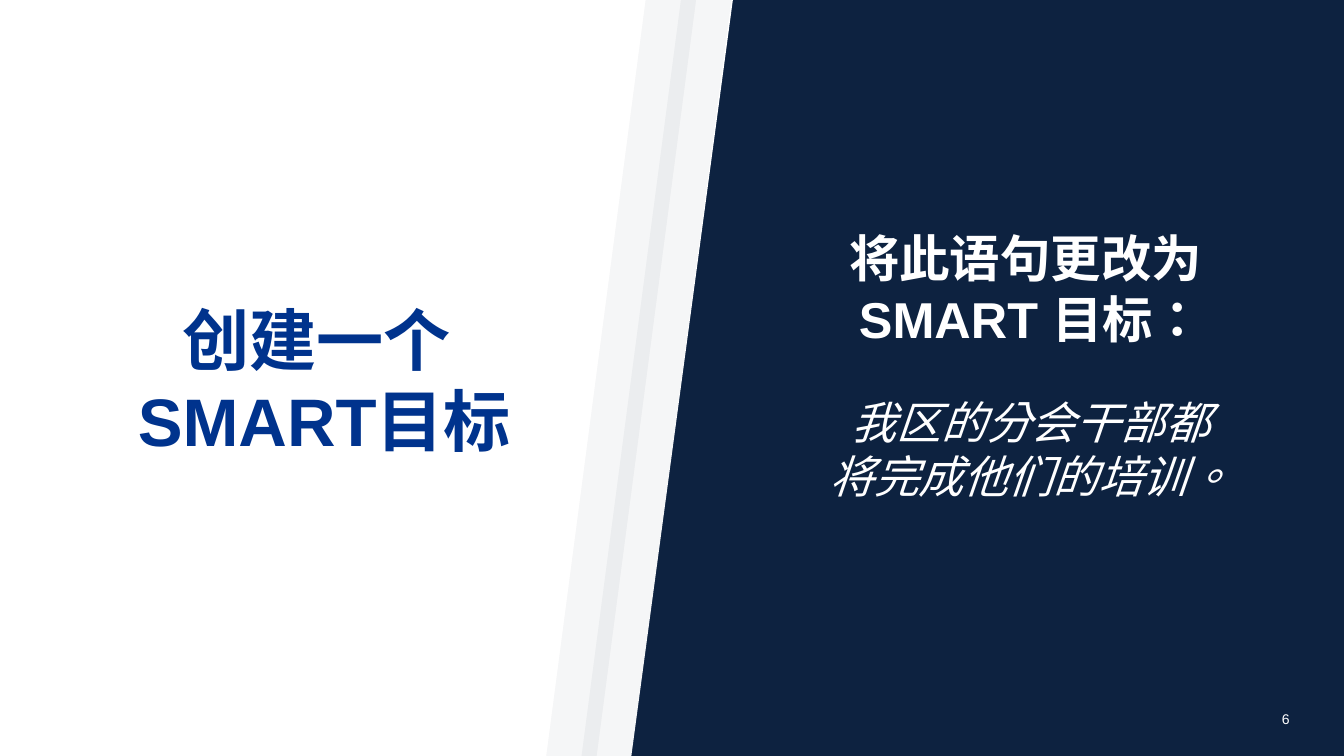
import pptx
import pptx.util
import pptx.dml.color
import pptx.enum.lang
import pptx.enum.shapes
import pptx.enum.text
import pptx.oxml.ns
import lxml.etree

Pt = pptx.util.Pt
ALIGN = pptx.enum.text.PP_ALIGN
ANCHOR = pptx.enum.text.MSO_ANCHOR
CHINESE = pptx.enum.lang.MSO_LANGUAGE_ID.TRADITIONAL_CHINESE
WIDTH, HEIGHT = 960, 540
NAVY, BLUE, WHITE = "0D2240", "00338D", "FFFFFF"


def paint(fill, color):
    fill.solid()
    fill.fore_color.rgb = pptx.dml.color.RGBColor.from_string(color)


def set_alpha(sp, percent):
    clr = sp._element.spPr.xpath("a:solidFill/a:srgbClr")[0]
    alpha = lxml.etree.SubElement(clr, pptx.oxml.ns.qn("a:alpha"))
    alpha.set("val", str(percent * 1000))


def finish(sp, color):
    paint(sp.fill, color)
    sp.line.fill.background()
    sp.shadow.inherit = False


def add_panel(slide, color):
    sp = slide.shapes.add_shape(
        pptx.enum.shapes.MSO_SHAPE.RECTANGLE, 0, 0, Pt(WIDTH), Pt(HEIGHT))
    finish(sp, color)


def add_slanted(slide, top, bottom, color, alpha=None):
    points = [(top[0], 0), (top[1], 0), (bottom[1], HEIGHT), (bottom[0], HEIGHT)]
    points = [(Pt(x), Pt(y)) for x, y in points]
    builder = slide.shapes.build_freeform(*points[0])
    builder.add_line_segments(points[1:], close=True)
    sp = builder.convert_to_shape()
    finish(sp, color)
    if alpha is not None:
        set_alpha(sp, alpha)


def write(sp, lines, size, color, bold=False, italic=False,
          align=ALIGN.CENTER, anchor=ANCHOR.TOP):
    tf = sp.text_frame
    tf.word_wrap = True
    tf.auto_size = pptx.enum.text.MSO_AUTO_SIZE.NONE
    tf.vertical_anchor = anchor
    for i, text in enumerate(lines):
        p = tf.paragraphs[0] if i == 0 else tf.add_paragraph()
        p.alignment = align
        r = p.add_run()
        r.text = text
        r.font.name = "Arial"
        r.font.language_id = CHINESE
        r.font.size = Pt(size)
        r.font.bold = bold
        r.font.italic = italic
        paint(r.font.fill, color)


def add_text(slide, left, top, width, height, lines, **fmt):
    sp = slide.shapes.add_textbox(Pt(left), Pt(top), Pt(width), Pt(height))
    write(sp, lines, **fmt)


def set_title(slide, left, top, width, height, lines, **fmt):
    sp = slide.shapes.title
    sp.left, sp.top, sp.width, sp.height = Pt(left), Pt(top), Pt(width), Pt(height)
    write(sp, lines, **fmt)
    slide.shapes._spTree.append(sp._element)


def main():
    prs = pptx.Presentation()
    prs.slide_width, prs.slide_height = Pt(WIDTH), Pt(HEIGHT)
    slide = prs.slides.add_slide(prs.slide_layouts[5])
    paint(slide.background.fill, WHITE)

    add_panel(slide, NAVY)
    add_slanted(slide, (0, 523.5), (0, 451), WHITE)
    for left in (390.2, 415.4):
        add_slanted(slide, (left + 71, left + 107), (left, left + 36), NAVY, alpha=4)

    set_title(slide, 69, 208, 325.5, 124, ["创建一个 ", "SMART目标"],
              size=48, color=BLUE, bold=True, anchor=ANCHOR.BOTTOM)
    add_text(slide, 908.5, 504, 51.5, 36, ["6"],
             size=10, color=WHITE, align=ALIGN.LEFT)
    add_text(slide, 533.5, 159, 406, 101.5, ["将此语句更改为 ", "SMART 目标："],
             size=36, color=WHITE, bold=True)
    add_text(slide, 551, 278.5, 371, 85, ["我区的分会干部都", "将完成他们的培训。"],
             size=32, color=WHITE, italic=True)

    prs.save("out.pptx")


if __name__ == "__main__":
    main()
